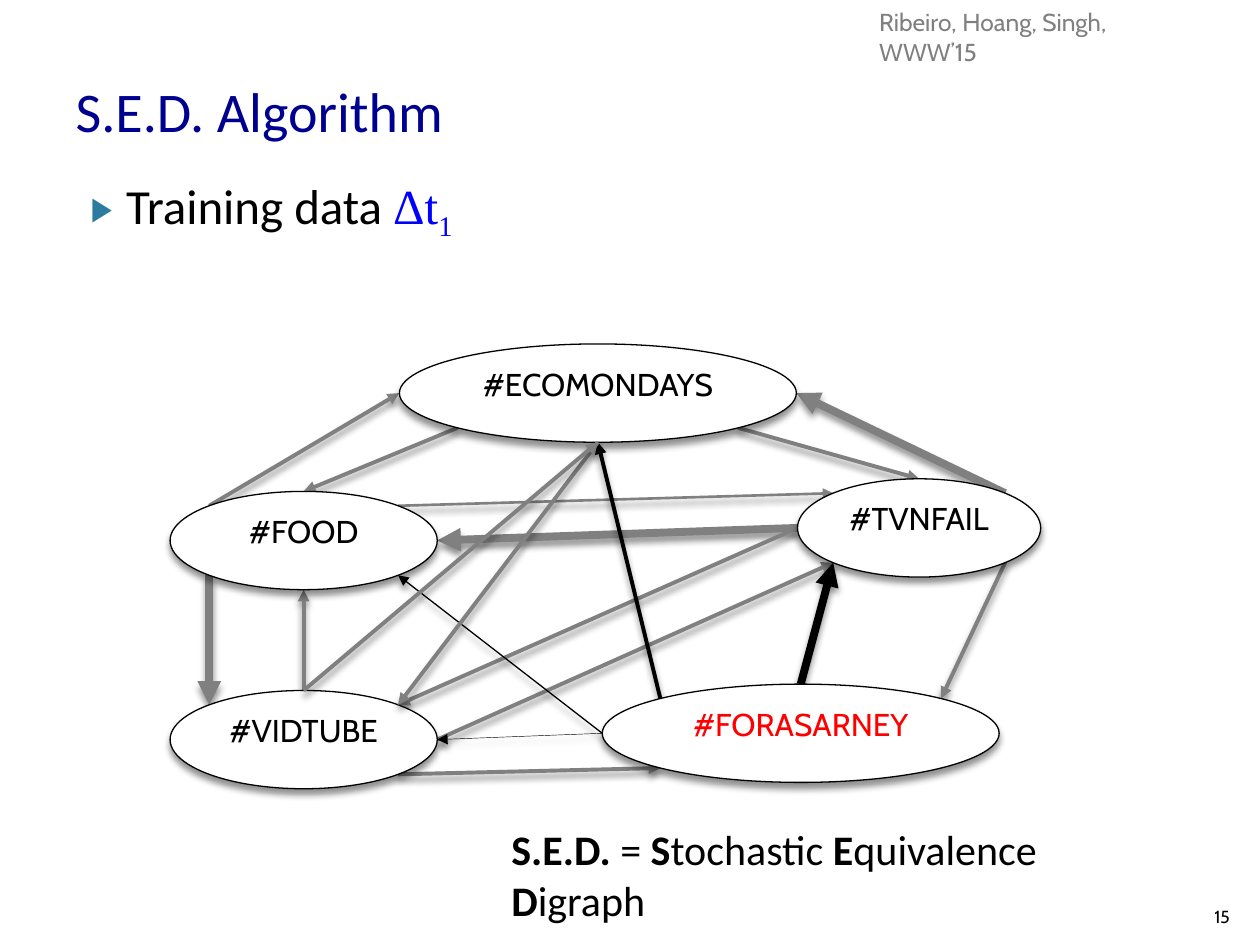
import math
from lxml import etree
from pptx import Presentation
from pptx import util as u
from pptx.dml.color import RGBColor
from pptx.enum import shapes, text
from pptx.oxml import ns

BLACK = RGBColor(0x00, 0x00, 0x00)
WHITE = RGBColor(0xFF, 0xFF, 0xFF)
GRAY = RGBColor(0x80, 0x80, 0x80)
RED = RGBColor(0xFF, 0x00, 0x00)
BLUE = RGBColor(0x00, 0x00, 0xFF)
NAVY = RGBColor(0x00, 0x00, 0x90)
TEAL = RGBColor(0x2C, 0x7C, 0x9F)

NODE_HEIGHT = 0.78
NODES = {
    "#FOOD": (1.35, 3.9, 2.12, BLACK),
    "#ECOMONDAYS": (3.17, 2.73, 3.15, BLACK),
    "#FORASARNEY": (4.78, 5.43, 3.15, RED),
    "#VIDTUBE": (1.35, 5.48, 2.12, BLACK),
    "#TVNFAIL": (6.33, 3.8, 1.93, BLACK),
}
DIAGONAL = math.sqrt(0.5)
SITES = {
    "top": (0, -1),
    "bottom": (0, 1),
    "left": (-1, 0),
    "right": (1, 0),
    "top left": (-DIAGONAL, -DIAGONAL),
    "top right": (DIAGONAL, -DIAGONAL),
    "bottom left": (-DIAGONAL, DIAGONAL),
    "bottom right": (DIAGONAL, DIAGONAL),
}
EDGES_BEHIND = [
    ("#TVNFAIL", "left", "#FOOD", "right", GRAY, 4.5),
    ("#VIDTUBE", "top", "#FOOD", "bottom", GRAY, 2.25),
    ("#ECOMONDAYS", "bottom left", "#FOOD", "top", GRAY, 2.25),
    ("#FOOD", "top right", "#TVNFAIL", "top left", GRAY, 1.5),
    ("#ECOMONDAYS", "bottom right", "#TVNFAIL", "top", GRAY, 2.25),
    ("#FOOD", "bottom left", "#VIDTUBE", "top left", GRAY, 4.5),
    ("#TVNFAIL", "bottom right", "#FORASARNEY", "top right", GRAY, 2.25),
    ("#TVNFAIL", "left", "#VIDTUBE", "top right", GRAY, 2.25),
    ("#VIDTUBE", "right", "#TVNFAIL", "bottom left", GRAY, 2.25),
    ("#TVNFAIL", "top right", "#ECOMONDAYS", "right", GRAY, 4.5),
    ("#FOOD", "top left", "#ECOMONDAYS", "left", GRAY, 2.25),
    ("#FORASARNEY", "left", "#FOOD", "bottom right", BLACK, 0.75),
    ("#FORASARNEY", "top left", "#ECOMONDAYS", "bottom", BLACK, 2.25),
    ("#FORASARNEY", "left", "#VIDTUBE", "right", BLACK, 0.25),
    ("#FORASARNEY", "top", "#TVNFAIL", "bottom left", BLACK, 4.5),
    ("#VIDTUBE", "bottom right", "#FORASARNEY", "bottom left", GRAY, 2.25),
]
EDGES_IN_FRONT = [
    ("#ECOMONDAYS", "bottom", "#VIDTUBE", "top right", GRAY, 2.25),
    ("#VIDTUBE", "top", "#ECOMONDAYS", "bottom", GRAY, 2.25),
]


def add_element(parent, tag, **attributes):
    element = etree.SubElement(parent, ns.qn(tag))
    for name, value in attributes.items():
        element.set(name, str(value))
    return element


def set_font(font, name, size, color, bold=None):
    font.name = name
    font.size = u.Pt(size)
    font.color.rgb = color
    font.bold = bold


def place(shape, left, top, width, height):
    shape.left, shape.top = u.Inches(left), u.Inches(top)
    shape.width, shape.height = u.Inches(width), u.Inches(height)


def add_shadow(shape):
    effects = add_element(shape._element.spPr, "a:effectLst")
    shadow = add_element(effects, "a:outerShdw", blurRad=u.Pt(4), dist=u.Pt(3),
                         dir=90 * 60000, rotWithShape=0)
    color = add_element(shadow, "a:srgbClr", val=BLACK)
    add_element(color, "a:alpha", val=43000)


def site_point(node, site):
    left, top, width, _ = NODES[node]
    across, down = SITES[site]
    return (u.Inches(left + width / 2 * (1 + across)),
            u.Inches(top + NODE_HEIGHT / 2 * (1 + down)))


def add_edge(slide, source, source_site, target, target_site, color, width):
    connector = slide.shapes.add_connector(
        shapes.MSO_CONNECTOR.STRAIGHT,
        *site_point(source, source_site), *site_point(target, target_site))
    connector.line.color.rgb = color
    connector.line.width = u.Pt(width)
    add_element(connector.line._get_or_add_ln(), "a:tailEnd", type="triangle")
    add_shadow(connector)


def add_node(slide, name, left, top, width, color):
    node = slide.shapes.add_shape(
        shapes.MSO_SHAPE.OVAL, u.Inches(left), u.Inches(top),
        u.Inches(width), u.Inches(NODE_HEIGHT))
    node.fill.solid()
    node.fill.fore_color.rgb = WHITE
    node.line.color.rgb = BLACK
    node.line.width = u.Pt(0.75)
    add_shadow(node)
    node.text_frame.vertical_anchor = text.MSO_ANCHOR.TOP
    paragraph = node.text_frame.paragraphs[0]
    paragraph.text = name
    paragraph.alignment = text.PP_ALIGN.CENTER
    set_font(paragraph.font, "Cabin", 18, color)


def add_text_box(slide, left, top, width, height):
    box = slide.shapes.add_textbox(u.Inches(left), u.Inches(top),
                                   u.Inches(width), u.Inches(height))
    box.text_frame.word_wrap = True
    return box.text_frame


def add_label(slide, words, bounds, size, color):
    frame = add_text_box(slide, *bounds)
    paragraph = frame.paragraphs[0]
    paragraph.text = words
    set_font(paragraph.font, "Cabin", size, color)
    return frame


def add_run(paragraph, words, *font):
    run = paragraph.add_run()
    run.text = words
    set_font(run.font, *font)
    return run


def fill_title(title):
    place(title, 0.5, 0.56, 9, 0.62)
    title.text_frame.vertical_anchor = text.MSO_ANCHOR.MIDDLE
    paragraph = title.text_frame.paragraphs[0]
    paragraph.text = "S.E.D. Algorithm"
    paragraph.alignment = text.PP_ALIGN.LEFT
    set_font(paragraph.font, "Calibri", 32, NAVY)


def fill_body(body):
    place(body, 0.5, 1.34, 9, 5.41)
    paragraph = body.text_frame.paragraphs[0]
    paragraph.space_before = u.Pt(4)
    properties = paragraph._p.get_or_add_pPr()
    properties.set("marL", str(u.Inches(0.4)))
    properties.set("indent", str(u.Inches(-0.28)))
    add_element(add_element(properties, "a:buClr"), "a:srgbClr", val=TEAL)
    add_element(properties, "a:buSzPct", val=68000)
    add_element(properties, "a:buChar", char="▶")
    add_run(paragraph, "Training data ", "Calibri", 28, BLACK)
    add_run(paragraph, "Δt", "Times New Roman", 28, BLUE)
    subscript = add_run(paragraph, "1", "Times New Roman", 28, BLUE)
    subscript._r.get_or_add_rPr().set("baseline", "-25000")


def add_definition(slide):
    paragraph = add_text_box(slide, 3.96, 6.49, 5.4, 0.5).paragraphs[0]
    parts = [("S.E.D.", " = "), ("S", "tochastic "),
             ("E", "quivalence "), ("D", "igraph")]
    for strong, plain in parts:
        add_run(paragraph, strong, "Calibri", 24, BLACK, True)
        add_run(paragraph, plain, "Calibri", 24, BLACK, False)


def main():
    presentation = Presentation()
    presentation.slide_width = u.Inches(10)
    presentation.slide_height = u.Inches(7.5)
    slide = presentation.slides.add_slide(presentation.slide_layouts[1])
    fill_title(slide.shapes.title)
    fill_body(slide.placeholders[1])
    add_label(slide, "Ribeiro, Hoang, Singh, WWW’15", (6.88, 0.01, 2.77, 0.34), 14, GRAY)
    number = add_label(slide, "15", (9.46, 7.01, 0.4, 0.4), 10, BLACK)
    number.vertical_anchor = text.MSO_ANCHOR.BOTTOM
    number.paragraphs[0].alignment = text.PP_ALIGN.RIGHT
    add_definition(slide)
    for edge in EDGES_BEHIND:
        add_edge(slide, *edge)
    for name, node in NODES.items():
        add_node(slide, name, *node)
    for edge in EDGES_IN_FRONT:
        add_edge(slide, *edge)
    presentation.save("out.pptx")


if __name__ == "__main__":
    main()
